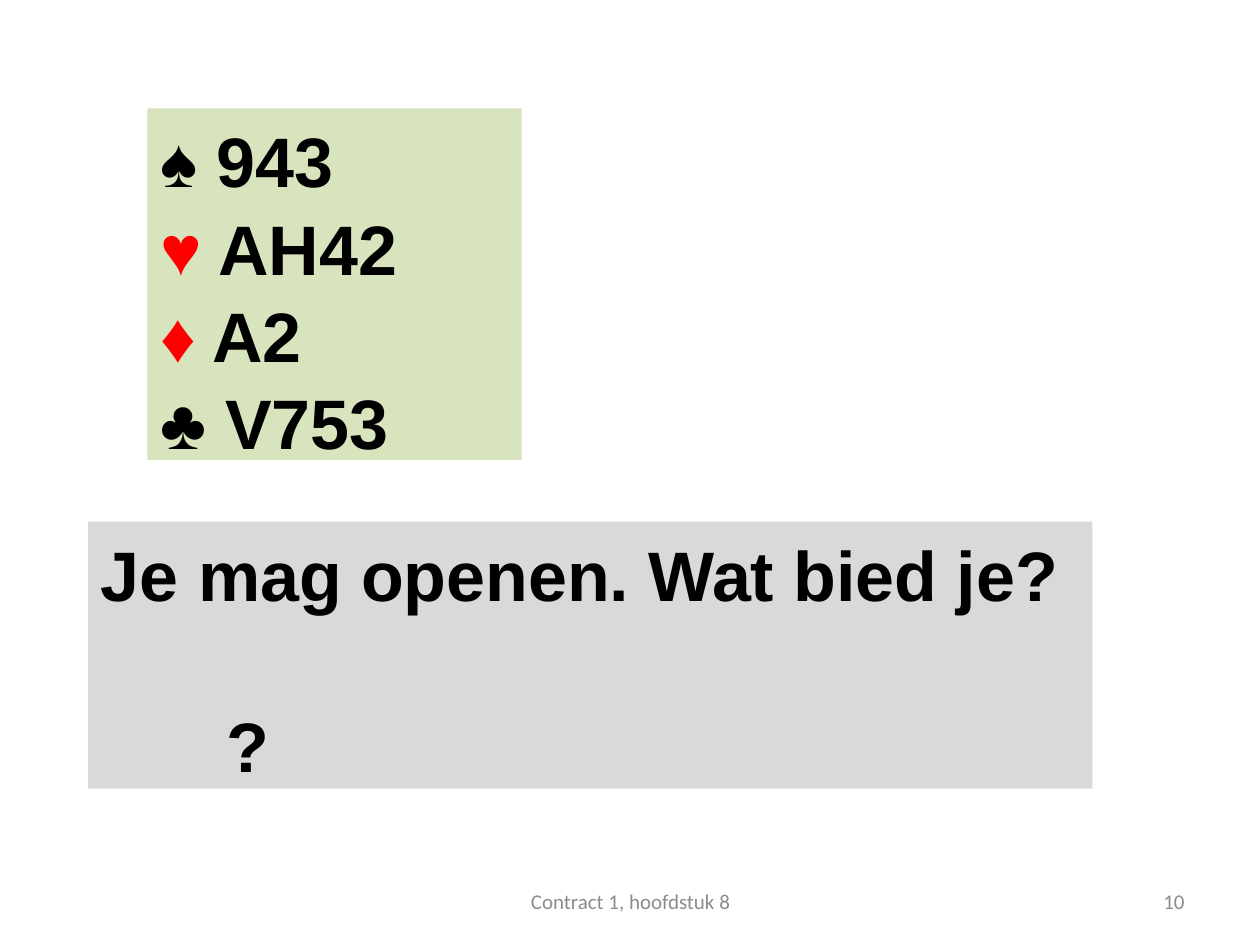
import pptx
import pptx.util
from pptx.dml.color import RGBColor
from pptx.enum.text import MSO_ANCHOR, MSO_AUTO_SIZE, PP_ALIGN
from pptx.util import Inches, Pt

BLACK = RGBColor(0x00, 0x00, 0x00)
RED = RGBColor(0xFF, 0x00, 0x00)
GREEN = RGBColor(0xD7, 0xE4, 0xBD)
LIGHT_GREY = RGBColor(0xD9, 0xD9, 0xD9)
FOOTER_GREY = RGBColor(0x8C, 0x8C, 0x8C)

HAND = [("♠", "943", BLACK), ("♥", "AH42", RED), ("♦", "A2", RED), ("♣", "V753", BLACK)]
QUESTION = ["Je mag openen. Wat bied je?", "?"]
HAND_BOX = (1.17, 0.86, 2.97, 2.79)
QUESTION_BOX = (0.7, 4.14, 7.97, 2.12)
FOOTERS = [
    ("Contract 1, hoofdstuk 8", (3.42, 6.95, 3.17, 0.4), PP_ALIGN.CENTER),
    ("10", (7.17, 6.95, 2.33, 0.4), PP_ALIGN.RIGHT),
]


def style_run(r, name, size, color, bold=False):
    r.font.name, r.font.size, r.font.bold = name, Pt(size), bold
    r.font.color.rgb = color


def prepare_panel(sp, box, fill):
    """Place a placeholder as a filled panel with top-anchored text."""
    sp.left, sp.top, sp.width, sp.height = map(Inches, box)
    sp.fill.solid()
    sp.fill.fore_color.rgb = fill
    tf = sp.text_frame
    tf.word_wrap = True
    tf.auto_size = MSO_AUTO_SIZE.NONE
    tf.vertical_anchor = MSO_ANCHOR.TOP
    return tf


def format_line(p, indent=0.0, before=0):
    """Left-align a panel line, without a bullet."""
    p.alignment = PP_ALIGN.LEFT
    p.line_spacing = 1.04
    p.space_before = Pt(before)
    pPr = p._p.get_or_add_pPr()
    pPr.set("marL", str(Inches(indent)))
    pPr.set("indent", "0")
    pPr.append(pptx.oxml.parse_xml(
        '<a:buNone xmlns:a="http://schemas.openxmlformats.org/drawingml/2006/main"/>'))


def main():
    prs = pptx.Presentation()
    prs.slide_width, prs.slide_height = Inches(10), Inches(7.5)
    s = prs.slides.add_slide(prs.slide_layouts[1])

    tf = prepare_panel(s.placeholders[1], HAND_BOX, GREEN)
    for i, (suit, cards, color) in enumerate(HAND):
        p = tf.paragraphs[0] if i == 0 else tf.add_paragraph()
        format_line(p)
        for text, run_color in ((suit, color), (f" {cards}", BLACK)):
            r = p.add_run()
            r.text = text
            style_run(r, "Arial", 40, run_color, bold=True)

    tf = prepare_panel(s.shapes.title, QUESTION_BOX, LIGHT_GREY)
    tf.text = "\n".join(QUESTION)
    for p, indent, before in zip(tf.paragraphs, (0, 1), (0, 48)):
        format_line(p, indent, before)
        style_run(p.runs[0], "Arial", 40, BLACK, bold=True)

    for text, box, alignment in FOOTERS:
        tf = s.shapes.add_textbox(*map(Inches, box)).text_frame
        tf.word_wrap = True
        tf.vertical_anchor = MSO_ANCHOR.MIDDLE
        tf.text = text
        p = tf.paragraphs[0]
        p.alignment = alignment
        style_run(p.runs[0], "Calibri", 12, FOOTER_GREY)

    prs.save("out.pptx")


if __name__ == "__main__":
    main()
